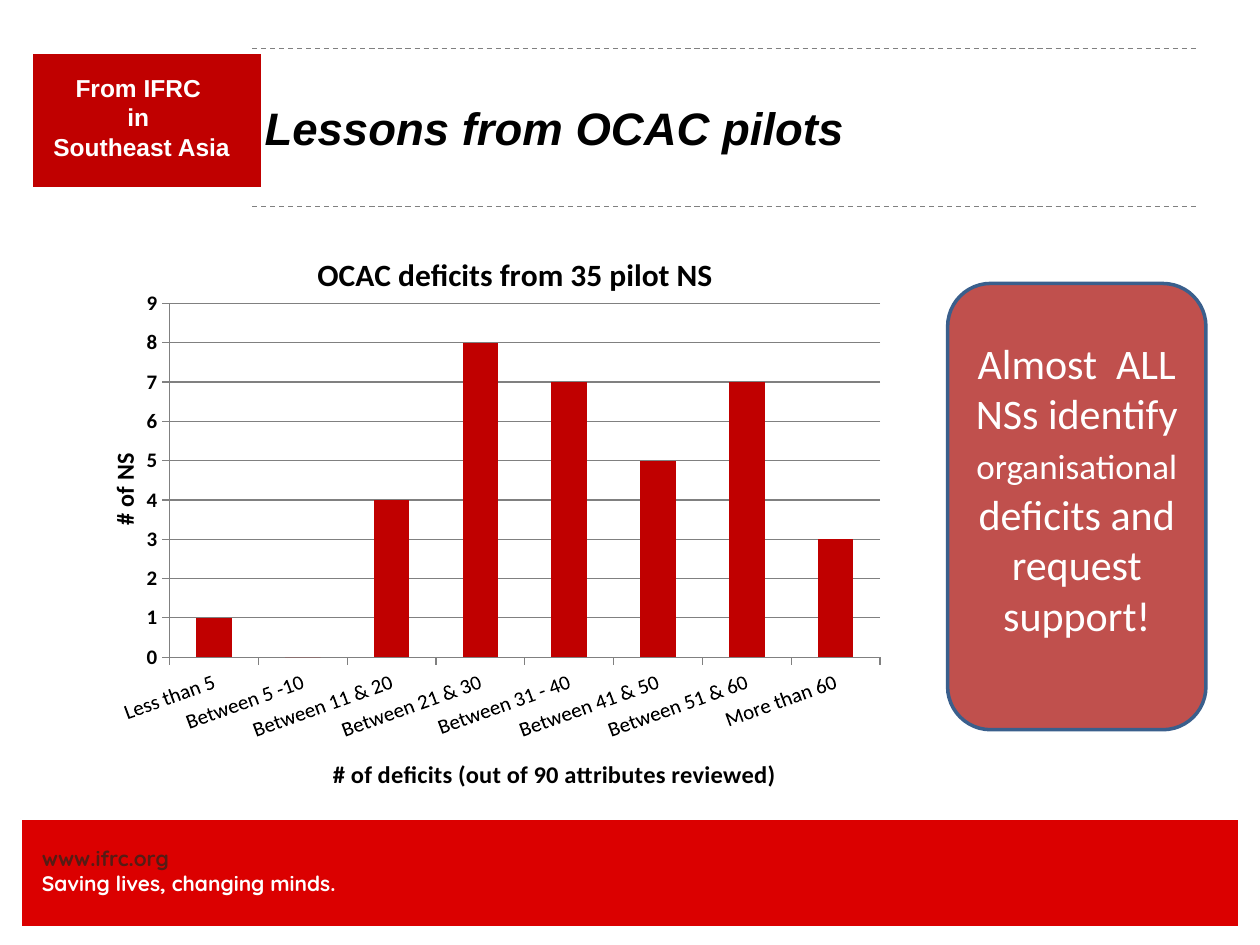
"""Builds the slide on lessons from the OCAC pilots, with a column chart of deficits."""
from lxml import etree
from pptx import Presentation
from pptx.chart.data import CategoryChartData
from pptx.dml.color import RGBColor
from pptx.enum.chart import XL_CHART_TYPE, XL_TICK_MARK
from pptx.enum.dml import MSO_LINE
from pptx.enum.shapes import MSO_CONNECTOR, MSO_SHAPE
from pptx.enum.text import MSO_ANCHOR, PP_ALIGN
from pptx.oxml.ns import qn
from pptx.util import Inches, Pt

WHITE = RGBColor(0xFF, 0xFF, 0xFF)
BLACK = RGBColor(0, 0, 0)
GREY = RGBColor(0x80, 0x80, 0x80)
RED = RGBColor(0xC0, 0, 0)
BRIGHT_RED = RGBColor(0xDB, 0, 0)
BROWN = RGBColor(0x55, 0x1C, 0x15)
BRICK = RGBColor(0xC0, 0x50, 0x4D)
BLUE = RGBColor(0x3A, 0x5F, 0x8C)

prs = Presentation()
prs.slide_width, prs.slide_height = Inches(10), Inches(7.5)
COLUMN, ROW = prs.slide_width / 120, prs.slide_height / 90
slide = prs.slides.add_slide(prs.slide_layouts[5])
shapes = slide.shapes


def cell(left, top, width, height):
    return int(left * COLUMN), int(top * ROW), int(width * COLUMN), int(height * ROW)


def style(font, name, size, color, bold=False, italic=False):
    font.name, font.size, font.bold, font.italic = name, Pt(size), bold, italic
    font.color.rgb = color


panels = []
for preset, area, fill, edge, edge_width in (
    (MSO_SHAPE.RECTANGLE, (2, 78, 116, 10.3), BRIGHT_RED, WHITE, 0.75),
    (MSO_SHAPE.RECTANGLE, (3, 5, 22, 13), RED, WHITE, 2),
    (MSO_SHAPE.ROUNDED_RECTANGLE, (90.25, 27, 24.6, 42.5), BRICK, BLUE, 2),
):
    panel = shapes.add_shape(preset, *cell(*area))
    panel.shadow.inherit = False
    panel.fill.solid()
    panel.fill.fore_color.rgb = fill
    panel.line.color.rgb = edge
    panel.line.width = Pt(edge_width)
    panels.append(panel)
message = panels[-1].text_frame

motto = shapes.add_textbox(*cell(4, 80.5, 41, 4.8)).text_frame
motto.word_wrap = True
motto.margin_left = motto.margin_right = motto.margin_top = motto.margin_bottom = 0
motto.text = "www.ifrc.org\nSaving lives, changing minds."
for paragraph, color in zip(motto.paragraphs, (BROWN, WHITE)):
    style(paragraph.runs[0].font, "Quicksand", 12, color, bold=True)

region = shapes.add_textbox(*cell(2, 6.35, 23, 9.7)).text_frame
region.word_wrap = True
region.text = "From IFRC \nin \nSoutheast Asia"
for paragraph in region.paragraphs:
    paragraph.alignment = PP_ALIGN.CENTER
    style(paragraph.runs[0].font, "Arial", 14, WHITE, bold=True)

for row in (4.65, 19.65):
    left, top, width, _ = cell(24, row, 90, 0)
    rule = shapes.add_connector(MSO_CONNECTOR.STRAIGHT, left, top, left + width, top)
    rule.line.color.rgb = GREY
    rule.line.width = Pt(0.75)
    rule.line.dash_style = MSO_LINE.DASH
    etree.SubElement(rule.element.spPr, qn("a:effectLst"))

title = shapes.title
title.left, title.top, title.width, title.height = cell(24, 4.6, 90, 15)
title.text_frame.text = "Lessons from OCAC pilots"
title.text_frame.vertical_anchor = MSO_ANCHOR.MIDDLE
heading = title.text_frame.paragraphs[0]
heading.alignment = PP_ALIGN.LEFT
style(heading.runs[0].font, "Arial", 26, BLACK, bold=True, italic=True)

message.word_wrap = True
message.vertical_anchor = MSO_ANCHOR.MIDDLE
message.margin_bottom = Inches(0.34)
advice = message.paragraphs[0]
advice.alignment = PP_ALIGN.CENTER
for words, size in (
    ("Almost  ALL NSs identify ", 24),
    ("organisational", 20),
    (" deficits and request support!", 24),
):
    run = advice.add_run()
    run.text = words
    style(run.font, "Calibri", size, WHITE)

deficits = CategoryChartData()
deficits.categories = [
    "Less than 5", "Between 5 -10", "Between 11 & 20", "Between 21 & 30",
    "Between 31 - 40", "Between 41 & 50", "Between 51 & 60", "More than 60",
]
deficits.add_series("Series 1", (1, 0, 4, 8, 7, 5, 7, 3))
chart = shapes.add_chart(
    XL_CHART_TYPE.COLUMN_CLUSTERED, *cell(9, 21.4, 79.6, 54.5), deficits
).chart
style(chart.font, "Calibri", 10, BLACK)
chart.has_legend = False
chart.has_title = True

category_axis, value_axis = chart.category_axis, chart.value_axis
value_axis.minimum_scale, value_axis.maximum_scale, value_axis.major_unit = 0, 9, 1
value_axis.has_major_gridlines = True
value_axis.major_gridlines.format.line.color.rgb = GREY
for axis, bold in ((category_axis, False), (value_axis, True)):
    axis.has_title = True
    axis.major_tick_mark = XL_TICK_MARK.OUTSIDE
    axis.format.line.color.rgb = GREY
    style(axis.tick_labels.font, "Calibri", 12, BLACK, bold=bold)
category_axis._element.txPr.bodyPr.set("rot", str(-20 * 60000))

chart_title = chart.chart_title
chart_title.include_in_layout = False
for holder, words, size in (
    (chart_title, "OCAC deficits from 35 pilot NS", 18),
    (category_axis.axis_title, "# of deficits (out of 90 attributes reviewed)", 14),
    (value_axis.axis_title, "# of NS", 14),
):
    holder.text_frame.text = words
    style(holder.text_frame.paragraphs[0].runs[0].font, "Calibri", size, BLACK, bold=True)
value_axis.axis_title.text_frame._txBody.bodyPr.set("rot", str(-90 * 60000))

plot = chart.plots[0]
plot.gap_width = 150
plot.vary_by_categories = False
bars = plot.series[0].format.fill
bars.solid()
bars.fore_color.rgb = RED

for part, position, settings in (
    (chart._chartSpace.chart.plotArea, 0, (
        ("layoutTarget", "inner"), ("xMode", "edge"), ("yMode", "edge"),
        ("x", 0.09), ("y", 0.14), ("w", 0.85), ("h", 0.63))),
    (chart_title._element, 1, (
        ("xMode", "edge"), ("yMode", "edge"), ("x", 0.26), ("y", 0.04))),
    (category_axis.axis_title._element, 1, (
        ("xMode", "edge"), ("yMode", "edge"), ("x", 0.28), ("y", 0.94))),
    (value_axis.axis_title._element, 1, (
        ("xMode", "edge"), ("yMode", "edge"), ("x", 0.01), ("y", 0.4))),
):
    for automatic in part.findall(qn("c:layout")):
        part.remove(automatic)
    layout = etree.Element(qn("c:layout"))
    manual = etree.SubElement(layout, qn("c:manualLayout"))
    for tag, setting in settings:
        etree.SubElement(manual, qn(f"c:{tag}")).set("val", str(setting))
    part.insert(position, layout)

prs.save("out.pptx")
